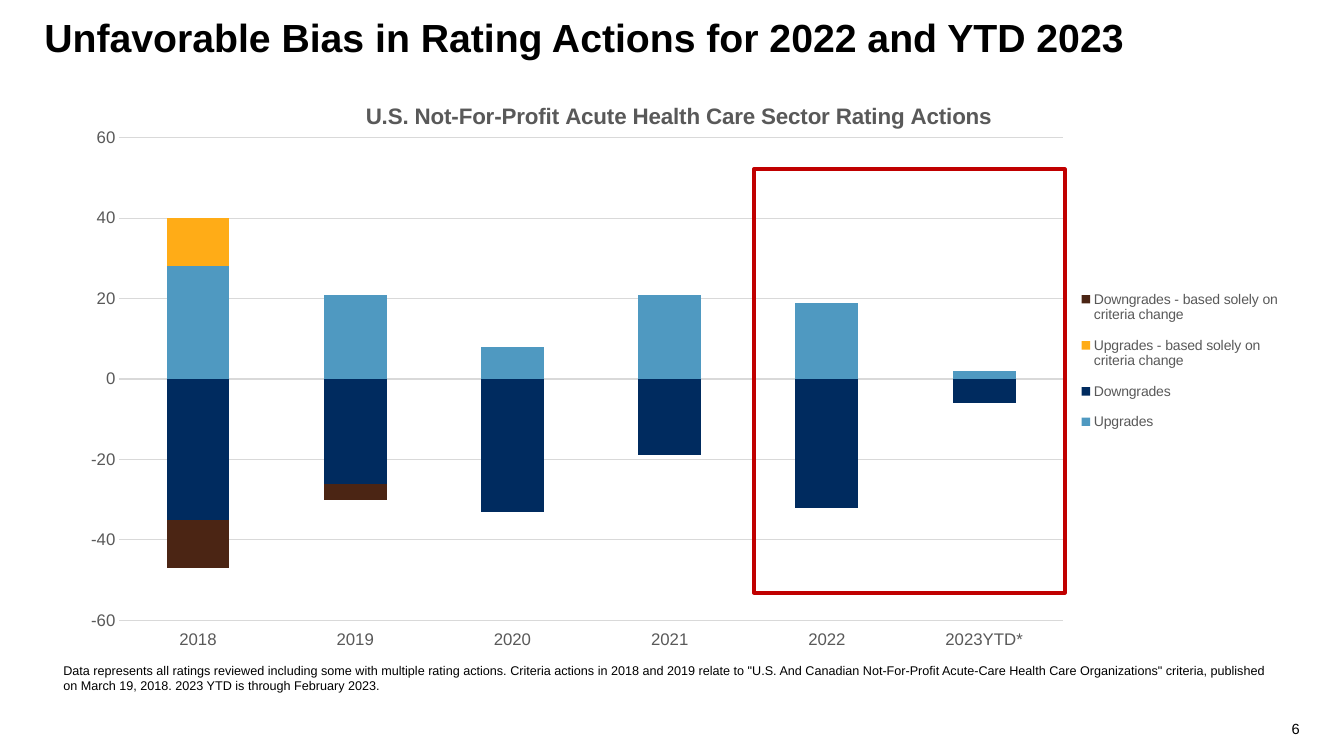
from lxml import etree
from pptx import Presentation
from pptx.chart.data import CategoryChartData
from pptx.dml.color import RGBColor
from pptx.enum.chart import XL_CHART_TYPE, XL_LEGEND_POSITION, XL_TICK_LABEL_POSITION, XL_TICK_MARK
from pptx.enum.shapes import MSO_SHAPE
from pptx.enum.text import MSO_ANCHOR, PP_ALIGN
from pptx.oxml.ns import qn
from pptx.util import Inches, Pt

STACKED = XL_CHART_TYPE.COLUMN_STACKED
LEGEND_RIGHT = XL_LEGEND_POSITION.RIGHT
LABELS_LOW = XL_TICK_LABEL_POSITION.LOW
NO_TICK = XL_TICK_MARK.NONE
RECTANGLE = MSO_SHAPE.RECTANGLE
TOP, BOTTOM = MSO_ANCHOR.TOP, MSO_ANCHOR.BOTTOM
LEFT, RIGHT = PP_ALIGN.LEFT, PP_ALIGN.RIGHT

FONT = "Arial"
COLORS = {
    "text": "000000",
    "label": "595959",
    "grid": "D9D9D9",
    "highlight": "C00000",
    "upgrades": "4F99C1",
    "downgrades": "002B5F",
    "criteria_up": "FFAC17",
    "criteria_down": "4B2514",
}
YEARS = ["2018", "2019", "2020", "2021", "2022", "2023YTD*"]
RATING_ACTIONS = [
    ("Upgrades", "upgrades", (28, 21, 8, 21, 19, 2)),
    ("Downgrades", "downgrades", (-35, -26, -33, -19, -32, -6)),
    ("Upgrades - based solely on criteria change", "criteria_up", (12, 0, 0, 0, 0, 0)),
    ("Downgrades - based solely on criteria change", "criteria_down", (-12, -4, 0, 0, 0, 0)),
]
FOOTNOTE = (
    "Data represents all ratings reviewed including some with multiple rating actions. "
    "Criteria actions in 2018 and 2019 relate to \"U.S. And Canadian Not-For-Profit "
    "Acute-Care Health Care Organizations\" criteria, published on March 19, 2018. "
    "2023 YTD is through February 2023."
)


def rgb(name):
    return RGBColor.from_string(COLORS[name])


def set_all(target, values):
    for name, value in values.items():
        setattr(target, name, value)


def format_font(font, size, color="text", bold=False):
    set_all(font, {"name": FONT, "size": Pt(size), "bold": bold})
    font.color.rgb = rgb(color)


def place(shape, box):
    set_all(shape, dict(zip(("left", "top", "width", "height"), map(Inches, box))))


def write(shape, text, size, bold=False, align=LEFT, spacing=None, **frame_values):
    frame = shape.text_frame
    set_all(frame, {"word_wrap": True, **frame_values})
    paragraph = frame.paragraphs[0]
    set_all(paragraph, {"alignment": align, "line_spacing": spacing})
    run = paragraph.add_run()
    run.text = text
    format_font(run.font, size, bold=bold)


def set_layout(element, index, **fractions):
    """Fix a chart part at fractions of the chart's width and height."""
    for old in element.findall(qn("c:layout")):
        element.remove(old)
    layout = etree.Element(qn("c:layout"))
    manual = etree.SubElement(layout, qn("c:manualLayout"))
    for tag, value in fractions.items():
        etree.SubElement(manual, qn(f"c:{tag}")).set("val", str(value))
    element.insert(index, layout)


def add_heading(slide, box):
    place(slide.shapes.title, box)
    write(slide.shapes.title, "Unfavorable Bias in Rating Actions for 2022 and YTD 2023", 28,
          bold=True, spacing=0.85, vertical_anchor=TOP,
          margin_left=0, margin_top=0, margin_right=0, margin_bottom=0)


def format_axes(chart):
    years, counts = chart.category_axis, chart.value_axis
    for axis in (years, counts):
        set_all(axis, {"major_tick_mark": NO_TICK, "minor_tick_mark": NO_TICK})
        format_font(axis.tick_labels.font, 12, "label")
    years.tick_label_position = LABELS_LOW
    set_all(counts, {"minimum_scale": -60, "maximum_scale": 60, "major_unit": 20})
    counts.format.line.fill.background()
    for line in (years.format.line, counts.major_gridlines.format.line):
        line.color.rgb = rgb("grid")
        line.width = Pt(0.75)


def add_rating_chart(slide, box):
    data = CategoryChartData()
    data.categories = YEARS
    for name, _, values in RATING_ACTIONS:
        data.add_series(name, values)
    chart = slide.shapes.add_chart(STACKED, *map(Inches, box), data).chart
    format_font(chart.font, 10)
    format_axes(chart)

    plot = chart.plots[0]
    set_all(plot, {"gap_width": 150, "overlap": 100, "vary_by_categories": False})
    for series, (_, color, _) in zip(plot.series, RATING_ACTIONS):
        series.invert_if_negative = False
        series.format.fill.solid()
        series.format.fill.fore_color.rgb = rgb(color)

    chart.has_title = True
    heading = chart.chart_title.text_frame.paragraphs[0].add_run()
    heading.text = "U.S. Not-For-Profit Acute Health Care Sector Rating Actions"
    format_font(heading.font, 16, "label", bold=True)

    chart.has_legend = True
    set_all(chart.legend, {"position": LEGEND_RIGHT, "include_in_layout": False})
    format_font(chart.legend.font, 10, "label")

    edges = {"xMode": "edge", "yMode": "edge"}
    set_layout(chart.chart_title._element, 1, **edges, x=0.24, y=0.03)
    set_layout(chart.legend._element, 1, **edges, x=0.82, y=0.33, w=0.17, h=0.28)
    set_layout(plot._element.getparent(), 0, layoutTarget="inner", **edges,
               x=0.043, y=0.097, w=0.767, h=0.808)


def add_highlight(slide, box):
    frame = slide.shapes.add_shape(RECTANGLE, *map(Inches, box))
    frame.shadow.inherit = False
    frame.fill.background()
    frame.line.color.rgb = rgb("highlight")
    frame.line.width = Pt(3)


def add_footnote(slide, box):
    write(slide.shapes.add_textbox(*map(Inches, box)), FOOTNOTE, 9)


def add_page_number(slide, box):
    write(slide.shapes.add_textbox(*map(Inches, box)), "6", 10.5, align=RIGHT,
          vertical_anchor=BOTTOM, margin_top=0, margin_right=0, margin_bottom=0)


def main():
    deck = Presentation()
    set_all(deck, {"slide_width": Inches(13.33), "slide_height": Inches(7.5)})
    slide = deck.slides.add_slide(deck.slide_layouts.get_by_name("Title Only"))
    add_footnote(slide, (0.53, 6.53, 12.23, 0.4))
    add_heading(slide, (0.44, 0.2, 12.42, 1.13))
    add_page_number(slide, (12.27, 6.91, 0.62, 0.41))
    add_rating_chart(slide, (0.66, 0.79, 12.2, 5.93))
    add_highlight(slide, (7.48, 1.68, 3.08, 4.2))
    deck.save("out.pptx")


if __name__ == "__main__":
    main()
